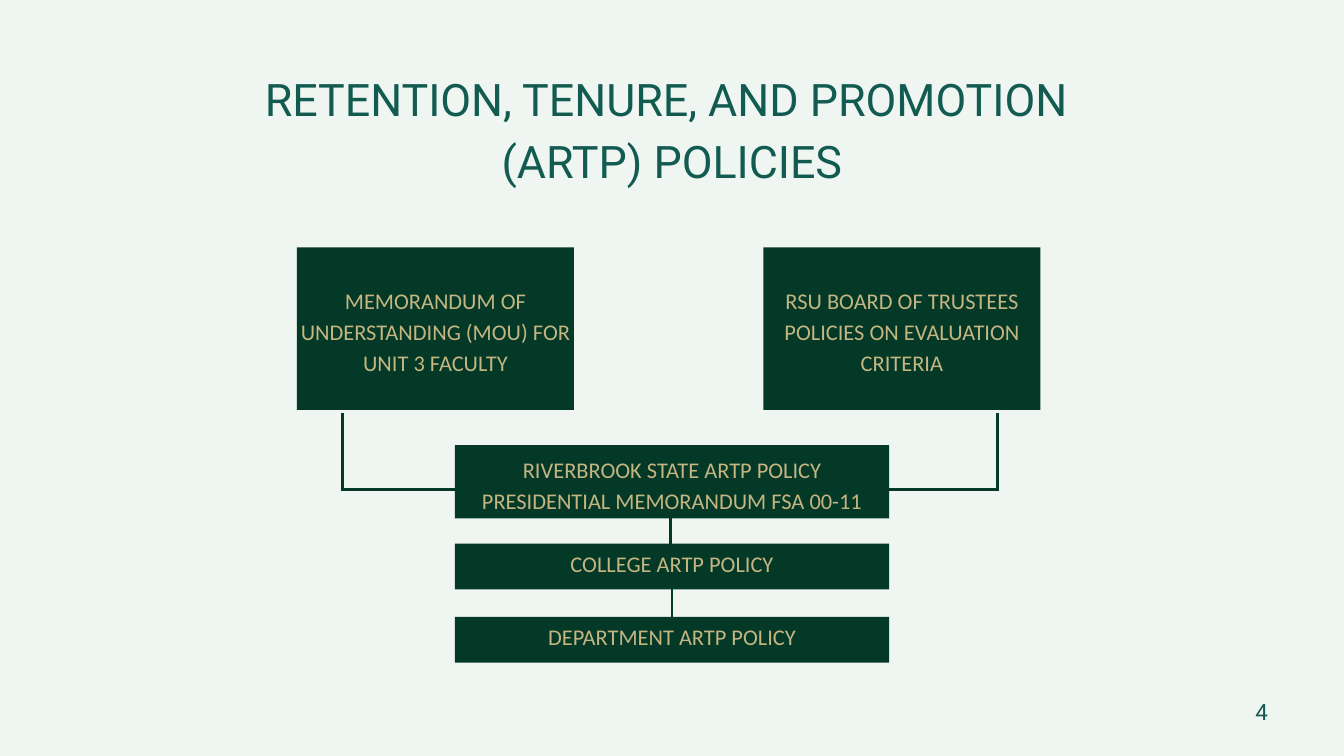
from lxml.etree import SubElement
from pptx import Presentation
from pptx.dml.color import RGBColor
from pptx.enum.shapes import MSO_CONNECTOR as Connector, MSO_SHAPE as Shape
from pptx.enum.text import MSO_ANCHOR as Anchor, PP_ALIGN as Align
from pptx.oxml.ns import qn
from pptx.util import Pt

COLORS = {"background": "EFF6F2", "box": "043927", "heading": "125B50", "label": "C4B581"}


def color(name):
    return RGBColor.from_string(COLORS[name])


def write_text(shape, lines, font_name, size, color_name, align=Align.CENTER, top=0):
    frame = shape.text_frame
    settings = {"word_wrap": True, "vertical_anchor": Anchor.TOP, "margin_left": 0,
                "margin_right": 0, "margin_top": Pt(top), "margin_bottom": 0}
    for name, value in settings.items():
        setattr(frame, name, value)
    frame.text = "\n".join(lines)
    for paragraph in frame.paragraphs:
        paragraph.alignment = align
        paragraph.line_spacing = Pt(size * 1.4)
        font = paragraph.runs[0].font
        for name, value in {"name": font_name, "size": Pt(size)}.items():
            setattr(font, name, value)
        font.color.rgb = color(color_name)


presentation = Presentation()
presentation.slide_width = Pt(1440)
presentation.slide_height = Pt(810)
slide = presentation.slides.add_slide(presentation.slide_layouts[6])
slide.background.fill.solid()
slide.background.fill.fore_color.rgb = color("background")

title = slide.shapes.add_textbox(Pt(81), Pt(67), Pt(1278), Pt(138))
write_text(title, ["RETENTION, TENURE, AND PROMOTION ", "(ARTP) POLICIES"], "Roboto", 48, "heading")
page_number = slide.shapes.add_textbox(Pt(1109.5), Pt(743.4), Pt(249), Pt(38))
write_text(page_number, ["4"], "Roboto", 24, "heading", Align.RIGHT)

policy_left, policy_width = 487.4, 465.2
policy_right = policy_left + policy_width
mou_x, trustees_x, join_y = 367.2, 1068.5, 524.2
connectors = [
    (mou_x, 442, mou_x, join_y + 1.5),
    (mou_x, join_y, policy_left, join_y),
    (trustees_x, 442, trustees_x, join_y + 1.5),
    (policy_right, join_y, trustees_x, join_y),
    (718.6, 555.4, 718.6, 582.5),
    (720, 631.5, 720, 661),
]
for ends in connectors:
    connector = slide.shapes.add_connector(Connector.STRAIGHT, *map(Pt, ends))
    connector.line.width = Pt(3)
    connector.line.color.rgb = color("box")
    SubElement(connector._element.spPr, qn("a:effectLst"))

boxes = [
    (318.2, 265, 296.7, 174.2, 37.4, ["MEMORANDUM OF UNDERSTANDING (MOU) FOR UNIT 3 FACULTY"]),
    (818, 265, 296.7, 174.2, 37.4, ["RSU BOARD OF TRUSTEES POLICIES ON EVALUATION CRITERIA"]),
    (policy_left, 476.8, policy_width, 78.6, 7,
     ["RIVERBROOK STATE ARTP POLICY", "PRESIDENTIAL MEMORANDUM FSA 00-11"]),
    (policy_left, 582.5, policy_width, 49, 2.2, ["COLLEGE ARTP POLICY"]),
    (policy_left, 661, policy_width, 49, 2.2, ["DEPARTMENT ARTP POLICY"]),
]
for left, top, width, height, text_top, lines in boxes:
    box = slide.shapes.add_shape(Shape.RECTANGLE, Pt(left), Pt(top), Pt(width), Pt(height))
    box.shadow.inherit = False
    box.fill.solid()
    box.fill.fore_color.rgb = color("box")
    box.line.fill.background()
    write_text(box, lines, "Calibri", 24, "label", top=text_top)

presentation.save("out.pptx")
